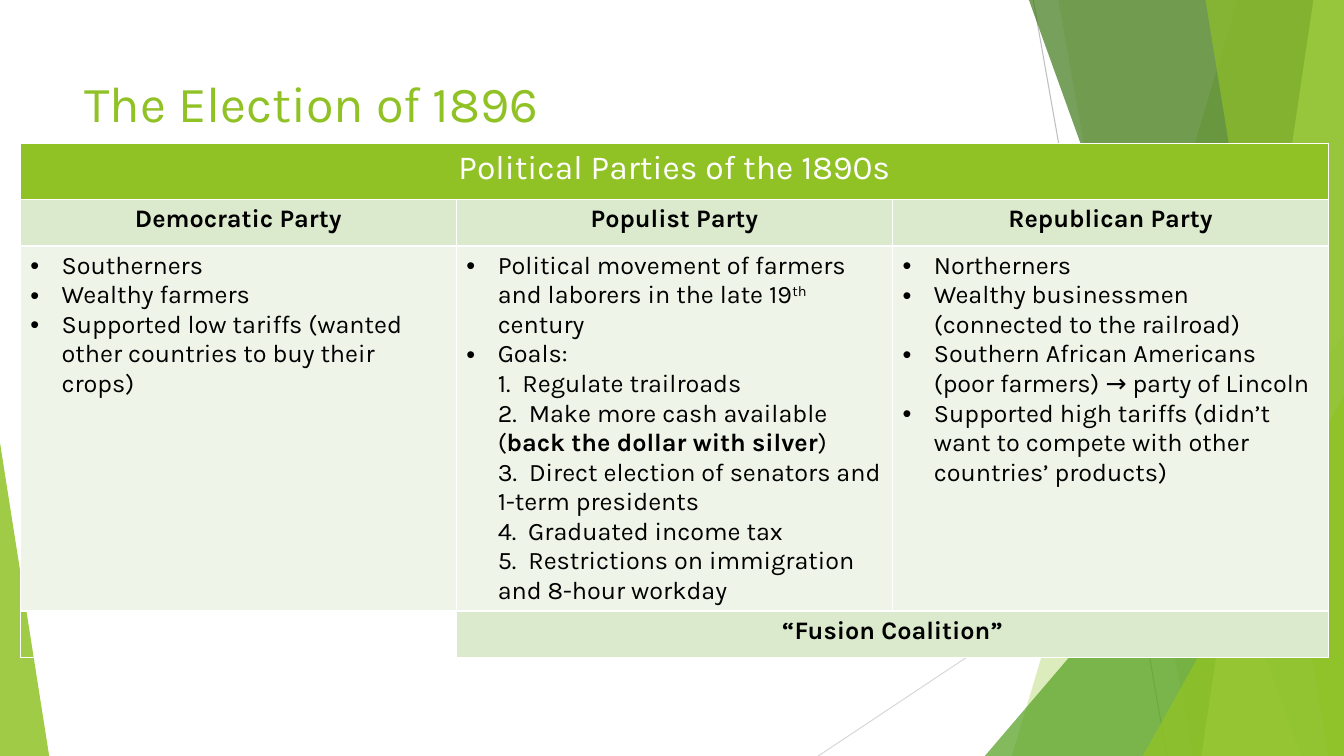
from dataclasses import dataclass
from typing import Optional, Union

from lxml.etree import SubElement
from pptx import Presentation
from pptx.dml.color import RGBColor
from pptx.enum.shapes import MSO_CONNECTOR, MSO_SHAPE
from pptx.enum.text import MSO_ANCHOR, MSO_AUTO_SIZE, PP_ALIGN
from pptx.oxml.ns import qn
from pptx.util import Cm, Pt

FONT = "Karla"
WIDTH, HEIGHT = 33.87, 19.05
COLORS = {
    "lime": "90C226", "green": "54A021", "forest": "3F7819", "pale": "C0E474",
    "heading": "DBE9CD", "body": "EEF4E8", "white": "FFFFFF", "black": "000000",
    "gray": "BFBFBF", "light_gray": "D9D9D9",
}


@dataclass
class Line:
    x1: float
    y1: float
    x2: float
    y2: float
    color: str


@dataclass
class Slab:
    top_x: float
    bottom_x: float
    color: str
    alpha: int


@dataclass
class Triangle:
    left: float
    top: float
    width: float
    apex: float
    color: str
    alpha: int


@dataclass
class Span:
    text: str
    bold: bool = False
    baseline: int = 0


@dataclass
class Cell:
    row: int
    col: int
    paragraphs: list[list[Span]]
    fill: str
    size: int = 18
    color: str = "black"
    bullets: bool = False
    last_col: Optional[int] = None


DECOR = [
    Line(26.04, 0, 29.41, HEIGHT, "gray"),
    Line(WIDTH, 10.24, 20.62, HEIGHT, "light_gray"),
    Slab(31.19, 25.5, "lime", 30),
    Slab(26.67, 30.05, "lime", 20),
    Triangle(24.82, 8.46, 9.05, 1, "green", 72),
    Slab(25.93, 32.79, "forest", 70),
    Slab(33.1, 30.28, "pale", 70),
    Slab(30.38, 33.48, "lime", 65),
    Triangle(28.8, 9.98, 5.07, 1, "lime", 80),
    Triangle(0, 11.15, 1.24, 0, "lime", 85),
]
PARTIES = {
    "Democratic Party": [
        [Span("Southerners")],
        [Span("Wealthy farmers")],
        [Span("Supported low tariffs (wanted other countries to buy their crops)")],
    ],
    "Populist Party": [
        [Span("Political movement of farmers and laborers in the late 19"),
         Span("th", baseline=30000), Span(" century")],
        [Span("Goals:\n1.  Regulate trailroads\n2.  Make more cash available ("),
         Span("back the dollar with silver", bold=True),
         Span(")\n3.  Direct election of senators and 1-term presidents\n"
              "4.  Graduated income tax\n"
              "5.  Restrictions on immigration and 8-hour workday")],
    ],
    "Republican Party": [
        [Span("Northerners")],
        [Span("Wealthy businessmen (connected to the railroad)")],
        [Span("Southern African Americans (poor farmers) → party of Lincoln")],
        [Span("Supported high tariffs (didn’t want to compete with other countries’ products)")],
    ],
}
ROW_HEIGHTS = [1.42, 1.17, 8.94, 1.17]
COL_WIDTH = 10.99


def rgb(name: str) -> RGBColor:
    """Look up a palette colour."""
    return RGBColor.from_string(COLORS[name])


def draw_decor(s, item: Union[Line, Slab, Triangle]) -> None:
    """Draw one line or translucent shape of the backdrop."""
    if isinstance(item, Line):
        c = s.shapes.add_connector(MSO_CONNECTOR.STRAIGHT, Cm(item.x1), Cm(item.y1),
                                   Cm(item.x2), Cm(item.y2))
        c.line.color.rgb = rgb(item.color)
        c.line.width = Pt(0.75)
        SubElement(c._element.spPr, qn("a:effectLst"))
        return
    if isinstance(item, Slab):
        builder = s.shapes.build_freeform(Cm(item.top_x), 0)
        builder.add_line_segments([(Cm(WIDTH), 0), (Cm(WIDTH), Cm(HEIGHT)),
                                   (Cm(item.bottom_x), Cm(HEIGHT))])
        sp = builder.convert_to_shape()
    else:
        sp = s.shapes.add_shape(MSO_SHAPE.ISOSCELES_TRIANGLE, Cm(item.left), Cm(item.top),
                                Cm(item.width), Cm(HEIGHT - item.top))
        sp.adjustments[0] = item.apex
    sp.shadow.inherit = False
    sp.line.fill.background()
    sp.fill.solid()
    sp.fill.fore_color.rgb = rgb(item.color)
    color = sp._element.spPr.find(qn("a:solidFill"))[0]
    SubElement(color, qn("a:alpha"), val=str(item.alpha * 1000))


def add_borders(cell) -> None:
    """Give a table cell thin white borders."""
    tc_pr = cell._tc.get_or_add_tcPr()
    for side in ("lnL", "lnR", "lnT", "lnB"):
        ln = SubElement(tc_pr, qn(f"a:{side}"), w=str(Pt(1)))
        SubElement(SubElement(ln, qn("a:solidFill")), qn("a:srgbClr"), val=COLORS["white"])


def add_bullet(p) -> None:
    """Give a paragraph a hanging round bullet."""
    p_pr = p._p.get_or_add_pPr()
    p_pr.set("marL", str(Cm(0.79)))
    p_pr.set("indent", str(-Cm(0.79)))
    SubElement(p_pr, qn("a:buFont"), typeface="Arial")
    SubElement(p_pr, qn("a:buChar"), char="•")


def add_span(p, span: Span, size: int, color: str) -> None:
    """Add a formatted span, breaking lines where it says so."""
    for i, text in enumerate(span.text.split("\n")):
        if i:
            p.add_line_break()
        r = p.add_run()
        r.text = text
        r.font.name, r.font.size, r.font.bold = FONT, Pt(size), span.bold
        r.font.color.rgb = rgb(color)
        if span.baseline:
            r.font._element.set("baseline", str(span.baseline))


def fill_cell(table, item: Cell) -> None:
    """Merge, colour and write one cell of the table."""
    cell = table.cell(item.row, item.col)
    last = item.col if item.last_col is None else item.last_col
    if last > item.col:
        cell.merge(table.cell(item.row, last))
    for col in range(item.col, last + 1):
        add_borders(table.cell(item.row, col))
    cell.fill.solid()
    cell.fill.fore_color.rgb = rgb(item.fill)
    for i, spans in enumerate(item.paragraphs):
        p = cell.text_frame.add_paragraph() if i else cell.text_frame.paragraphs[0]
        p.alignment = PP_ALIGN.LEFT if item.bullets else PP_ALIGN.CENTER
        if item.bullets:
            add_bullet(p)
        for span in spans:
            add_span(p, span, item.size, item.color)


def add_title(s) -> None:
    """Place and format the title."""
    sp = s.shapes.title
    sp.left, sp.top, sp.width, sp.height = Cm(1.88), Cm(1.7), Cm(23.88), Cm(3.66)
    tf = sp.text_frame
    tf.text = "The Election of 1896"
    tf.vertical_anchor, tf.auto_size = MSO_ANCHOR.TOP, MSO_AUTO_SIZE.NONE
    p = tf.paragraphs[0]
    p.alignment = PP_ALIGN.LEFT
    font = p.runs[0].font
    font.name, font.size, font.color.rgb = FONT, Pt(36), rgb("lime")


def add_parties_table(s) -> None:
    """Build the table of political parties."""
    table = s.shapes.add_table(len(ROW_HEIGHTS), len(PARTIES), Cm(0.51), Cm(3.61),
                               Cm(COL_WIDTH * len(PARTIES)), Cm(sum(ROW_HEIGHTS))).table
    table.first_row = table.horz_banding = False
    for row, height in zip(table.rows, ROW_HEIGHTS):
        row.height = Cm(height)
    cells = [Cell(0, 0, [[Span("Political Parties of the 1890s")]], "lime", 24, "white", last_col=2)]
    for col, (party, points) in enumerate(PARTIES.items()):
        cells.append(Cell(1, col, [[Span(party, bold=True)]], "heading"))
        cells.append(Cell(2, col, points, "body", bullets=True))
    cells.append(Cell(3, 1, [[Span("“Fusion Coalition”", bold=True)]], "heading", last_col=2))
    for item in cells:
        fill_cell(table, item)
    table.cell(3, 0).fill.background()


def main() -> None:
    """Build and save the slide."""
    prs = Presentation()
    prs.slide_width, prs.slide_height = Cm(WIDTH), Cm(HEIGHT)
    s = prs.slides.add_slide(prs.slide_layouts[5])
    for item in DECOR:
        draw_decor(s, item)
    add_title(s)
    add_parties_table(s)
    prs.save("out.pptx")


if __name__ == "__main__":
    main()
